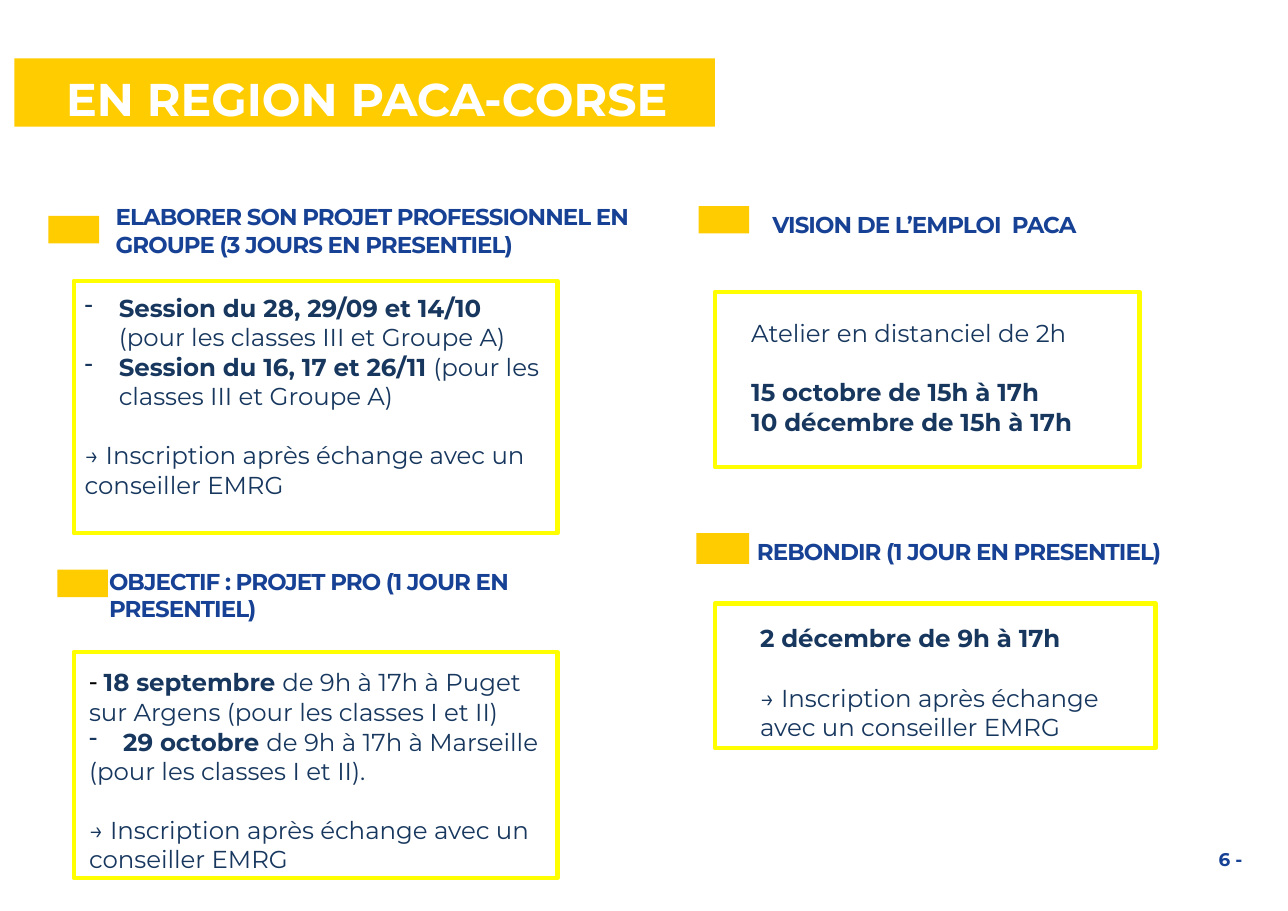
from lxml.etree import SubElement
from pptx import Presentation
from pptx.dml.color import RGBColor
from pptx.enum.shapes import MSO_SHAPE
from pptx.enum.text import MSO_ANCHOR, MSO_AUTO_SIZE, PP_ALIGN
from pptx.oxml.ns import qn
from pptx.util import Pt

PX = 9144  # 100 px to the inch

THEME = {
    "gold": RGBColor.from_string("FFCC00"),
    "yellow": RGBColor.from_string("FFFF00"),
    "white": RGBColor.from_string("FFFFFF"),
    "border": Pt(3),
    "gap": Pt(19.5),
    # style: font, size, colour, bold, letter spacing in 1/100 pt
    "title": ("Montserrat", 30, "FFFFFF", True, 0),
    "heading": ("Montserrat", 15, "164194", True, -60),
    "body": ("Montserrat", 16, "17375E", False, 0),
    "strong": ("Montserrat", 16, "17375E", True, 0),
    "dash": ("Calibri", 18, "000000", False, 0),
    "page": ("Montserrat", 12, "164194", True, 0),
    "page dash": ("Montserrat", 12, "164194", True, -50),
}


def write(sp, paragraphs, left=10, top=5, right=10, bottom=5):
    """Fill a shape with (kind, runs) paragraphs; kind is plain, bullet or gap."""
    tf = sp.text_frame
    tf.word_wrap = True
    tf.auto_size = MSO_AUTO_SIZE.NONE
    tf.vertical_anchor = MSO_ANCHOR.TOP
    tf.margin_left, tf.margin_top = left * PX, top * PX
    tf.margin_right, tf.margin_bottom = right * PX, bottom * PX
    for i, (kind, runs) in enumerate(paragraphs):
        p = tf.add_paragraph() if i else tf.paragraphs[0]
        p.alignment = PP_ALIGN.LEFT
        if kind == "bullet":
            pPr = p._p.get_or_add_pPr()
            pPr.set("marL", str(31 * PX))
            pPr.set("indent", str(-31 * PX))
            SubElement(pPr, qn("a:buChar")).set("char", "-")
        p.space_before = THEME["gap"] if kind == "gap" else Pt(0)
        for text, style in runs:
            font, size, colour, bold, spacing = THEME[style]
            r = p.add_run()
            r.text = text
            r.font.name, r.font.size, r.font.bold = font, Pt(size), bold
            r.font.color.rgb = RGBColor.from_string(colour)
            if spacing:
                r._r.get_or_add_rPr().set("spc", str(spacing))


def add_box(box, fill, line=None):
    sp = s.shapes.add_shape(MSO_SHAPE.RECTANGLE, *[v * PX for v in box])
    sp.shadow.inherit = False
    sp.fill.solid()
    sp.fill.fore_color.rgb = fill
    if line is None:
        sp.line.fill.background()
    else:
        sp.line.color.rgb = line
        sp.line.width = THEME["border"]


prs = Presentation()
prs.slide_width, prs.slide_height = 1169 * PX, 827 * PX
s = prs.slides.add_slide(prs.slide_layouts[5])

# Title banner
title = s.shapes.title
title.left, title.top, title.width, title.height = [v * PX for v in (13, 53, 636, 62)]
title.fill.solid()
title.fill.fore_color.rgb = THEME["gold"]
write(title, [("plain", [("EN REGION PACA-CORSE", "title")])], 47, 11, 0, 0)

# Workshops: heading, its box, gold marker, card, text box, paragraphs
signup = ("gap", [("→ Inscription après échange avec un conseiller EMRG", "body")])
classes = "(pour les classes III et Groupe A)"
workshops = [
    ("ELABORER SON PROJET PROFESSIONNEL EN GROUPE (3 JOURS EN PRESENTIEL)",
     (104, 183, 469, 52), (44, 196, 46, 25), (67, 255, 439, 229), (67, 261, 439, 229),
     [("bullet", [("Session du 28, 29/09 et 14/10 ", "strong"), (classes, "body")]),
      ("bullet", [("Session du 16, 17 et 26/11 ", "strong"), (classes, "body")]),
      signup]),
    ("OBJECTIF : PROJET PRO (1 JOUR EN PRESENTIEL)",
     (98, 514, 483, 79), (52, 517, 46, 25), (67, 592, 439, 205), (71, 598, 432, 229),
     [("plain", [("- ", "dash"), ("18 septembre ", "strong"),
                 ("de 9h à 17h à Puget sur Argens (pour les classes I et II)", "body")]),
      ("bullet", [("29 octobre ", "strong"), ("de 9h à 17h à Marseille", "body")]),
      ("plain", [("(pour les classes I et II).", "body")]),
      signup]),
    ("VISION DE L’EMPLOI  PACA",
     (700, 190, 469, 53), (634, 187, 46, 25), (649, 265, 385, 159), (672, 284, 362, 148),
     [("plain", [("Atelier en distanciel de 2h", "body")]),
      ("gap", [("15 octobre de 15h à 17h", "strong")]),
      ("plain", [("10 décembre de 15h à 17h", "strong")])]),
    ("REBONDIR (1 JOUR EN PRESENTIEL)",
     (686, 487, 469, 27), (632, 484, 48, 28), (649, 548, 400, 131), (680, 561, 378, 118),
     [("plain", [("2 décembre de 9h à 17h", "strong")]),
      signup]),
]
for heading, heading_box, marker, card, text_box, paragraphs in workshops:
    add_box(marker, THEME["gold"])
    add_box(card, THEME["white"], THEME["yellow"])
    tb = s.shapes.add_textbox(*[v * PX for v in heading_box])
    write(tb, [("plain", [(heading, "heading")])], 1, 1, 0, 0)
    tb = s.shapes.add_textbox(*[v * PX for v in text_box])
    write(tb, paragraphs)

# Page number
tb = s.shapes.add_textbox(*[v * PX for v in (1102, 767, 28, 25)])
write(tb, [("plain", [("6 ", "page"), ("-", "page dash")])], 4, 3, 0, 0)

prs.save("out.pptx")
